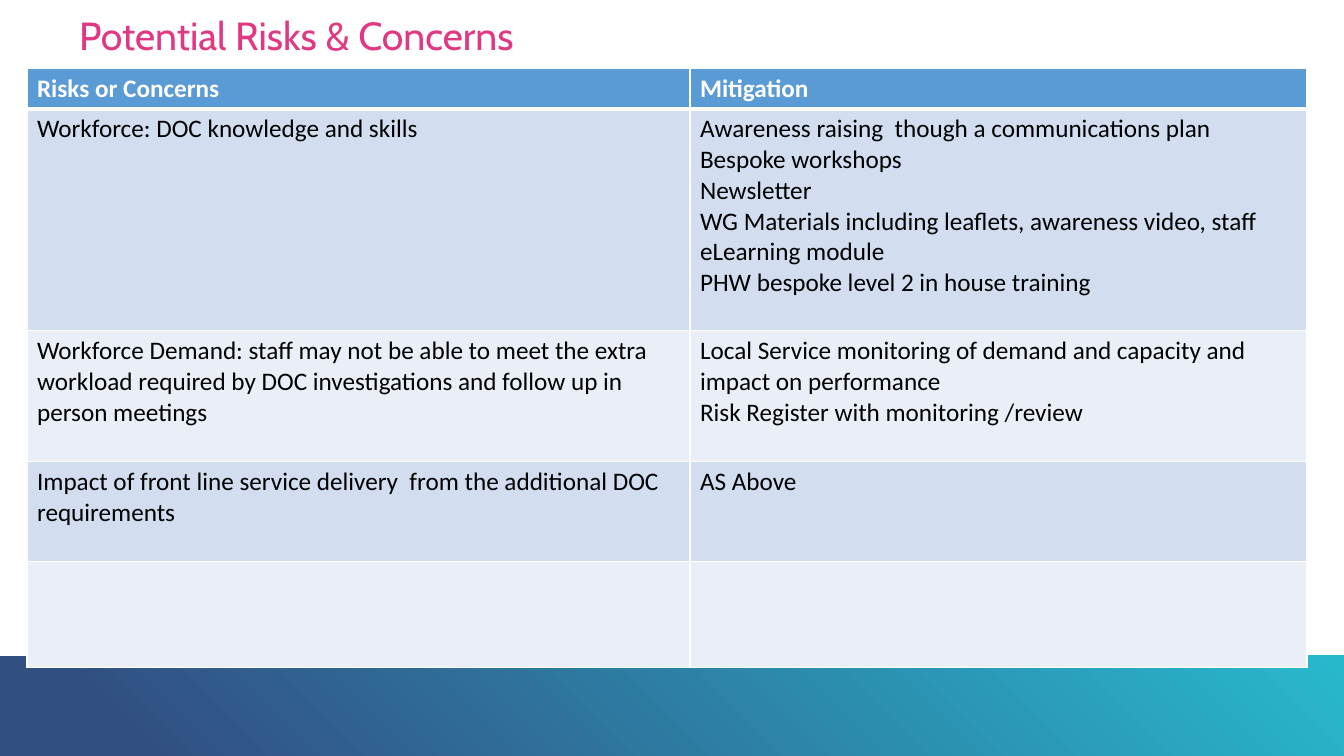
from pptx import Presentation
from pptx.dml.color import RGBColor
from pptx.enum.shapes import MSO_SHAPE
from pptx.enum.text import MSO_ANCHOR
from pptx.oxml.ns import qn
from pptx.util import Pt
from lxml import etree

RECT = MSO_SHAPE.RECTANGLE
MIDDLE = MSO_ANCHOR.MIDDLE

# Content: each cell is a list of paragraphs
TITLE = "Potential Risks & Concerns"
ROWS = [
    (["Risks or Concerns"], ["Mitigation"]),
    (["Workforce: DOC knowledge and skills"],
     ["Awareness raising  though a communications plan",
      "Bespoke workshops",
      "Newsletter",
      "WG Materials including leaflets, awareness video, staff eLearning module",
      "PHW bespoke level 2 in house training"]),
    (["Workforce Demand: staff may not be able to meet the extra workload "
      "required by DOC investigations and follow up in person meetings"],
     ["Local Service monitoring of demand and capacity and impact on performance",
      "Risk Register with monitoring /review"]),
    (["Impact of front line service delivery  from the additional DOC requirements"],
     ["AS Above"]),
    ([], []),
]

# Layout in px
WIDE, HIGH = 1344, 756
BAND_TOP = 656
TITLE_BOX = (79, 16, 1186, 43)
LEFT, TOP = 27, 68
COLS = [663, 617]
HEIGHTS = [40, 222, 131, 100, 106]

THEME = {
    "title": "E03882", "head": "5B9BD5", "odd": "D2DEEF", "even": "EAEFF7",
    "white": "FFFFFF", "ink": "000000", "band": [("324F82", 0.1), ("28B8CE", 1)],
    "title_font": "Cabin", "font": "Calibri", "title_size": 28, "size": 18,
}


def px(num):
    return round(num * 914400 / 100.8)


def color(name):
    return RGBColor.from_string(THEME[name])


def style(para, font, size, tint, bold=False):
    for run in para.runs:
        run.font.name = font
        run.font.size = Pt(size)
        run.font.bold = bold
        run.font.color.rgb = color(tint)


def border(cell, side, width):
    line = etree.SubElement(cell._tc.get_or_add_tcPr(), qn("a:" + side), w=str(Pt(width)))
    fill = etree.SubElement(line, qn("a:solidFill"))
    etree.SubElement(fill, qn("a:srgbClr"), val=THEME["white"])


def add_band(slide):
    band = slide.shapes.add_shape(RECT, 0, px(BAND_TOP), px(WIDE), px(HIGH - BAND_TOP))
    band.shadow.inherit = False
    band.line.fill.background()
    band.fill.gradient()
    band.fill.gradient_angle = 45
    for stop, (tint, place) in zip(band.fill.gradient_stops, THEME["band"]):
        stop.color.rgb = RGBColor.from_string(tint)
        stop.position = place


def add_grid(slide):
    frame = slide.shapes.add_table(len(ROWS), len(COLS), px(LEFT), px(TOP),
                                   px(sum(COLS)), px(sum(HEIGHTS)))
    grid = frame.table
    for col, width in zip(grid.columns, COLS):
        col.width = px(width)
    for row, height in zip(grid.rows, HEIGHTS):
        row.height = px(height)
    for r, row in enumerate(ROWS):
        head = r == 0
        back = "head" if head else "odd" if r % 2 else "even"
        for c, lines in enumerate(row):
            cell = grid.cell(r, c)
            for side in ("lnL", "lnR", "lnT", "lnB"):
                thick = (head and side == "lnB") or (r == 1 and side == "lnT")
                border(cell, side, 3 if thick else 1)
            cell.fill.solid()
            cell.fill.fore_color.rgb = color(back)
            cell.text_frame.text = "\n".join(lines)
            for para in cell.text_frame.paragraphs:
                style(para, THEME["font"], THEME["size"], "white" if head else "ink", head)


def add_title(slide):
    frame = slide.shapes.add_textbox(*map(px, TITLE_BOX)).text_frame
    frame.margin_left = frame.margin_right = frame.margin_top = frame.margin_bottom = 0
    frame.word_wrap = True
    frame.vertical_anchor = MIDDLE
    frame.text = TITLE
    para = frame.paragraphs[0]
    para.line_spacing = 0.9
    style(para, THEME["title_font"], THEME["title_size"], "title")


def main():
    deck = Presentation()
    deck.slide_width, deck.slide_height = px(WIDE), px(HIGH)
    slide = deck.slides.add_slide(deck.slide_layouts[6])
    add_band(slide)
    add_grid(slide)
    add_title(slide)
    deck.save("out.pptx")


if __name__ == "__main__":
    main()
